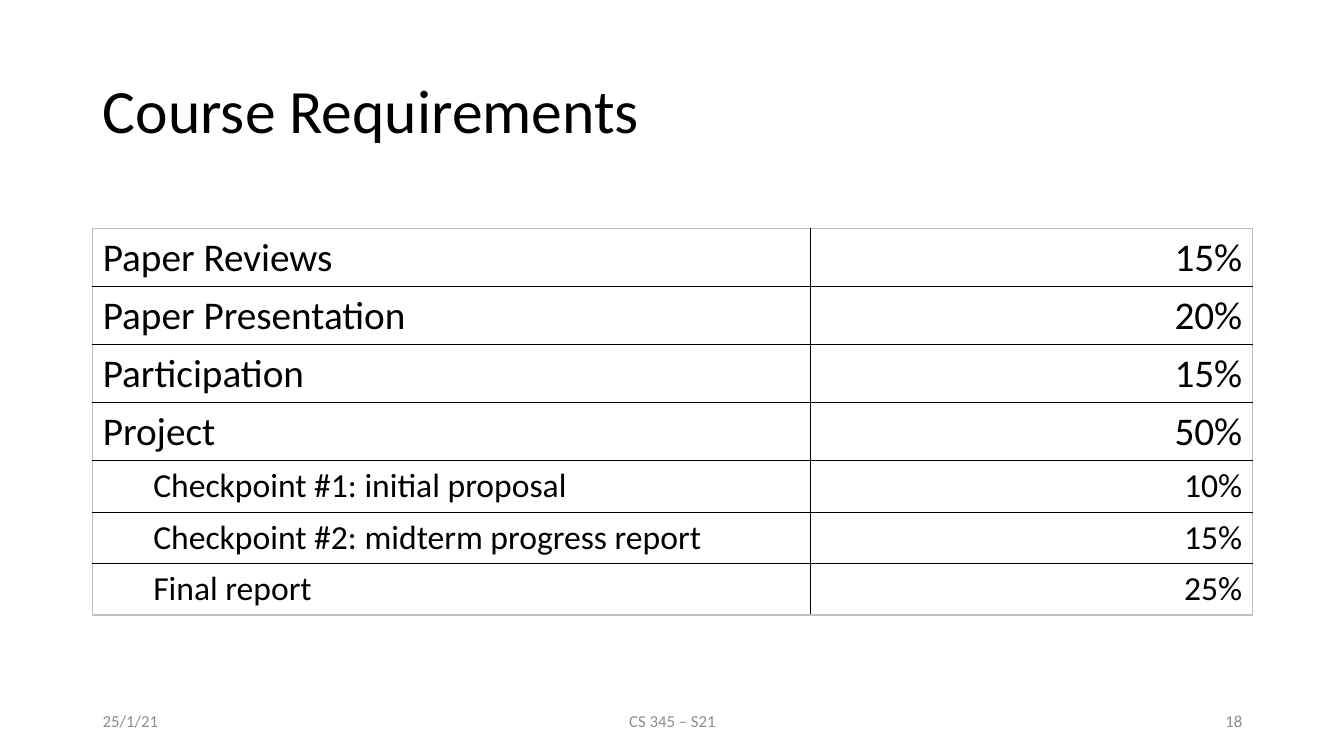
from lxml.etree import SubElement
from pptx import Presentation
from pptx.dml.color import RGBColor
from pptx.enum.text import MSO_ANCHOR, PP_ALIGN
from pptx.oxml.ns import qn
from pptx.util import Inches, Pt

FONT = "Calibri"
BLACK, GREY, FRAME = "000000", "8C8C8C", "BFBFBF"
LEFT, WIDTH = 0.92, 11.5
COLUMN_WIDTHS = (7.12, 4.38)
REQUIREMENTS = [
    ("Paper Reviews", "15%", False),
    ("Paper Presentation", "20%", False),
    ("Participation", "15%", False),
    ("Project", "50%", False),
    ("Checkpoint #1: initial proposal", "10%", True),
    ("Checkpoint #2: midterm progress report", "15%", True),
    ("Final report", "25%", True),
]
FOOTERS = [
    ("25/1/21", LEFT, 3, PP_ALIGN.LEFT),
    ("CS 345 – S21", 4.42, 4.5, PP_ALIGN.CENTER),
    ("18", 9.42, 3, PP_ALIGN.RIGHT),
]


def color(value):
    return RGBColor.from_string(value)


def write(frame, text, size, ink=BLACK, align=PP_ALIGN.LEFT):
    frame.word_wrap = True
    para = frame.paragraphs[0]
    para.text = text
    para.alignment = align
    para.font.name = FONT
    para.font.size = Pt(size)
    para.font.color.rgb = color(ink)
    return para


def add_title(page, text):
    title = page.shapes.title
    title.left, title.top = Inches(LEFT), Inches(0.4)
    title.width, title.height = Inches(WIDTH), Inches(1.45)
    title.text_frame.vertical_anchor = MSO_ANCHOR.MIDDLE
    write(title.text_frame, text, 44).line_spacing = 0.9


def add_border(cell, side, ink):
    properties = cell._tc.get_or_add_tcPr()
    line = SubElement(properties, qn(f"a:{side}"), w=str(Pt(1)))
    fill = SubElement(line, qn("a:solidFill"))
    SubElement(fill, qn("a:srgbClr"), val=ink)


def add_borders(cell, row, column):
    outer = {
        "lnL": column == 0,
        "lnR": column == len(COLUMN_WIDTHS) - 1,
        "lnT": row == 0,
        "lnB": row == len(REQUIREMENTS) - 1,
    }
    for side, on_frame in outer.items():
        add_border(cell, side, FRAME if on_frame else BLACK)


def add_requirements(page):
    heights = [0.51 if nested else 0.57 for _, _, nested in REQUIREMENTS]
    holder = page.shapes.add_table(
        len(REQUIREMENTS), len(COLUMN_WIDTHS),
        Inches(LEFT), Inches(2.27), Inches(WIDTH), Inches(sum(heights)))
    table = holder.table
    table.first_row = table.horz_banding = False
    for column, width in zip(table.columns, COLUMN_WIDTHS):
        column.width = Inches(width)
    for row, (name, share, nested) in enumerate(REQUIREMENTS):
        table.rows[row].height = Inches(heights[row])
        size = 24 if nested else 28
        name_cell, share_cell = table.cell(row, 0), table.cell(row, 1)
        para = write(name_cell.text_frame, name, size)
        if nested:
            para.level = 1
            para._p.get_or_add_pPr().set("marL", str(Inches(0.5)))
        write(share_cell.text_frame, share, size, align=PP_ALIGN.RIGHT)
        for column, cell in enumerate((name_cell, share_cell)):
            add_borders(cell, row, column)
            cell.fill.background()


def add_footer(page, text, left, width, align):
    box = page.shapes.add_textbox(
        Inches(left), Inches(6.95), Inches(width), Inches(0.4))
    box.text_frame.vertical_anchor = MSO_ANCHOR.MIDDLE
    write(box.text_frame, text, 12, GREY, align)


def main():
    deck = Presentation()
    deck.slide_width, deck.slide_height = Inches(13.33), Inches(7.5)
    page = deck.slides.add_slide(deck.slide_layouts[5])
    add_title(page, "Course Requirements")
    add_requirements(page)
    for footer in FOOTERS:
        add_footer(page, *footer)
    deck.save("out.pptx")


if __name__ == "__main__":
    main()
